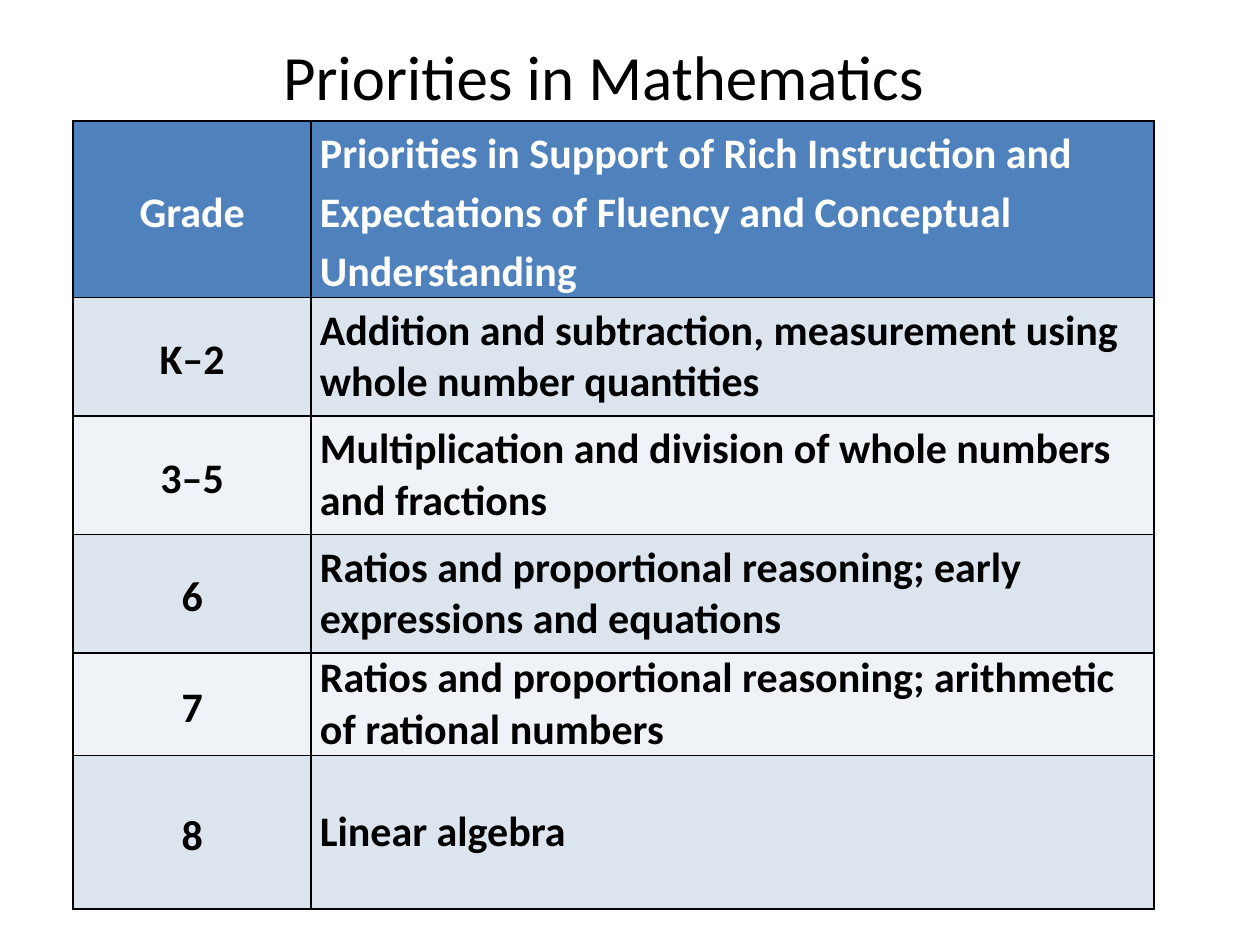
import pptx
import pptx.dml.color
import pptx.enum.text
import pptx.oxml
import pptx.oxml.ns
import pptx.util

Inches = pptx.util.Inches
Pt = pptx.util.Pt
RGB = pptx.dml.color.RGBColor
ALIGN = pptx.enum.text.PP_ALIGN
ANCHOR = pptx.enum.text.MSO_ANCHOR

BLACK = RGB(0x00, 0x00, 0x00)
WHITE = RGB(0xFF, 0xFF, 0xFF)
BLUE = RGB(0x4F, 0x81, 0xBD)
PALE = RGB(0xDC, 0xE5, 0xEE)
LIGHT = RGB(0xEF, 0xF3, 0xF7)

FONT = "Calibri"
COLS = [1.89, 6.69]
ROWS = [
    (1.4, "Grade", "Priorities in Support of Rich Instruction and "
     "Expectations of Fluency and Conceptual Understanding"),
    (0.94, "K–2", "Addition and subtraction, measurement using "
     "whole number quantities"),
    (0.94, "3–5", "Multiplication and division of whole numbers "
     "and fractions"),
    (0.94, "6", "Ratios and proportional reasoning; early "
     "expressions and equations"),
    (0.81, "7", "Ratios and proportional reasoning; arithmetic "
     "of rational numbers"),
    (1.22, "8", "Linear algebra"),
]


def add_text(frame, text, size, color, align, bold=False, space=1.0):
    para = frame.paragraphs[0]
    para.alignment = align
    para.line_spacing = space
    run = para.add_run()
    run.text = text
    run.font.name = FONT
    run.font.size = Pt(size)
    run.font.bold = bold
    run.font.color.rgb = color


def add_title(slide, text):
    box = slide.shapes.add_textbox(
        Inches(0.58), Inches(0.25), Inches(8.42), Inches(0.71))
    frame = box.text_frame
    frame.word_wrap = True
    frame.auto_size = pptx.enum.text.MSO_AUTO_SIZE.SHAPE_TO_FIT_TEXT
    add_text(frame, text, 36, BLACK, ALIGN.CENTER)


def add_lines(cell, color, width):
    props = cell._tc.get_or_add_tcPr()
    for side in "LRTB":
        props.append(pptx.oxml.parse_xml(
            f'<a:ln{side} {pptx.oxml.ns.nsdecls("a")} w="{Pt(width)}">'
            f'<a:solidFill><a:srgbClr val="{color}"/></a:solidFill>'
            f'</a:ln{side}>'))


def style_cell(cell, fill):
    add_lines(cell, BLACK, 1)
    cell.fill.solid()
    cell.fill.fore_color.rgb = fill
    cell.vertical_anchor = ANCHOR.MIDDLE
    cell.margin_left = cell.margin_right = Inches(0.07)
    cell.margin_top = cell.margin_bottom = 0


def add_grid(slide):
    high = sum(row[0] for row in ROWS)
    grid = slide.shapes.add_table(
        len(ROWS), len(COLS), Inches(0.58), Inches(0.96),
        Inches(sum(COLS)), Inches(high)).table
    for col, width in zip(grid.columns, COLS):
        col.width = Inches(width)
    for r, (height, *texts) in enumerate(ROWS):
        grid.rows[r].height = Inches(height)
        head = r == 0
        fill = BLUE if head else PALE if r % 2 else LIGHT
        for c, text in enumerate(texts):
            cell = grid.cell(r, c)
            style_cell(cell, fill)
            add_text(cell.text_frame, text, 24,
                     WHITE if head else BLACK,
                     ALIGN.LEFT if c else ALIGN.CENTER, bold=True,
                     space=1.15 if head or c == 0 else 1.0)


def main():
    deck = pptx.Presentation()
    deck.slide_width = Inches(10)
    deck.slide_height = Inches(7.5)
    slide = deck.slides.add_slide(deck.slide_layouts[6])
    add_grid(slide)
    add_title(slide, "Priorities in Mathematics")
    deck.save("out.pptx")


if __name__ == "__main__":
    main()
